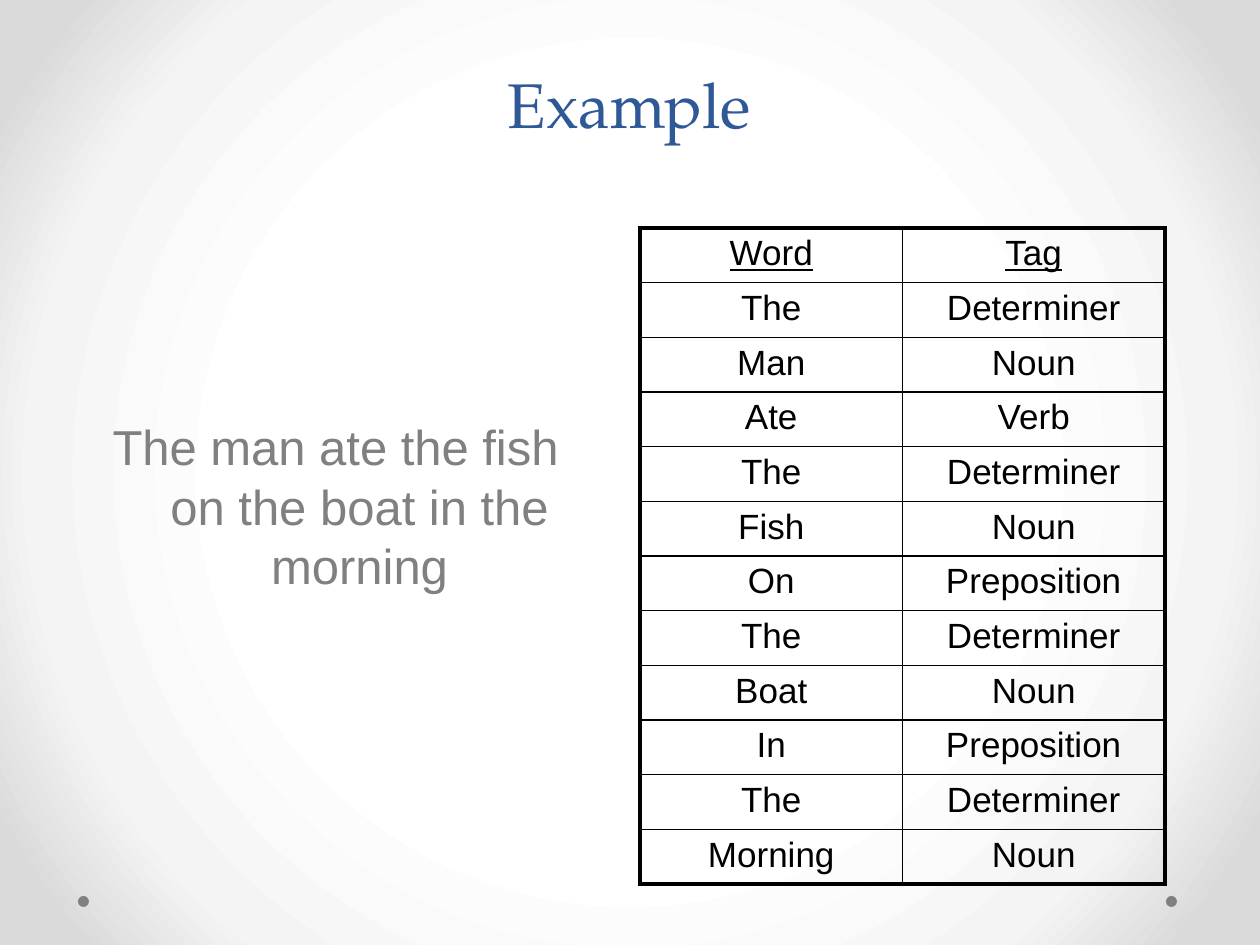
"""Build a slide that tags each word of a sentence with its part of speech."""
import pptx
import pptx.dml.color
import pptx.enum.shapes
import pptx.enum.text
import pptx.oxml
import pptx.oxml.ns
import pptx.util

WORD_TAGS = [
    ("Word", "Tag"),
    ("The", "Determiner"),
    ("Man", "Noun"),
    ("Ate", "Verb"),
    ("The", "Determiner"),
    ("Fish", "Noun"),
    ("On", "Preposition"),
    ("The", "Determiner"),
    ("Boat", "Noun"),
    ("In", "Preposition"),
    ("The", "Determiner"),
    ("Morning", "Noun"),
]


def px(length):
    return pptx.util.Emu(round(length * 914400 / 126))


def color(hex_code):
    return pptx.dml.color.RGBColor.from_string(hex_code)


class SlideBuilder:
    sans = "Arial"
    serif = "TeX Gyre Pagella"
    blue = "2F5897"
    gray = "808080"
    black = "000000"
    outer_line = 2.25
    inner_line = 1

    def __init__(self, slide):
        self.slide = slide

    def background(self, stops):
        fill = self.slide.background.fill
        fill.solid()
        solid = self.slide.element.find(".//" + pptx.oxml.ns.qn("p:bgPr"))[0]
        stop_xml = "".join(
            f'<a:gs pos="{percent * 1000}"><a:srgbClr val="{hex_code}"/></a:gs>'
            for percent, hex_code in stops
        )
        gradient = pptx.oxml.parse_xml(
            f'<a:gradFill {pptx.oxml.ns.nsdecls("a")} rotWithShape="1">'
            f"<a:gsLst>{stop_xml}</a:gsLst>"
            '<a:path path="circle"><a:fillToRect l="50000" t="50000" r="50000" b="50000"/></a:path>'
            "</a:gradFill>"
        )
        solid.getparent().replace(solid, gradient)

    def dot(self, left, top, size):
        shape = self.slide.shapes.add_shape(
            pptx.enum.shapes.MSO_SHAPE.OVAL, px(left), px(top), px(size), px(size)
        )
        shape.shadow.inherit = False
        shape.fill.solid()
        shape.fill.fore_color.rgb = color(self.gray)
        shape.line.fill.background()

    def add_span(self, para, text, font, size, hex_code, underline=False):
        para.alignment = pptx.enum.text.PP_ALIGN.CENTER
        span = para.add_run()
        span.text = text
        span.font.name = font
        span.font.size = pptx.util.Pt(size)
        span.font.color.rgb = color(hex_code)
        span.font.underline = underline

    def text(self, left, top, width, height, text, font, size, hex_code, spacing, anchor, hanging=0):
        box = self.slide.shapes.add_textbox(px(left), px(top), px(width), px(height))
        frame = box.text_frame
        frame.word_wrap = True
        frame.vertical_anchor = anchor
        para = frame.paragraphs[0]
        para.line_spacing = pptx.util.Pt(spacing)
        if hanging:
            properties = para._p.get_or_add_pPr()
            properties.set("marL", str(px(hanging)))
            properties.set("indent", str(px(-hanging)))
        self.add_span(para, text, font, size, hex_code)

    def borders(self, cell, widths):
        properties = cell._tc.get_or_add_tcPr()
        for position, (side, width) in enumerate(widths.items()):
            line = pptx.oxml.parse_xml(
                f'<a:{side} {pptx.oxml.ns.nsdecls("a")} w="{pptx.util.Pt(width)}">'
                f'<a:solidFill><a:srgbClr val="{self.black}"/></a:solidFill></a:{side}>'
            )
            properties.insert(position, line)

    def table(self, left, top, width, height, rows):
        last_row, last_column = len(rows) - 1, len(rows[0]) - 1
        table = self.slide.shapes.add_table(
            len(rows), len(rows[0]), px(left), px(top), px(width), px(height)
        ).table
        table.first_row = False
        table.horz_banding = False
        for row, values in enumerate(rows):
            for column, value in enumerate(values):
                cell = table.cell(row, column)
                cell.fill.background()
                self.add_span(cell.text_frame.paragraphs[0], value, self.sans, 20, self.black, row == 0)
                edges = {
                    "lnL": column == 0,
                    "lnR": column == last_column,
                    "lnT": row == 0,
                    "lnB": row == last_row,
                }
                self.borders(cell, {
                    side: self.outer_line if outer else self.inner_line
                    for side, outer in edges.items()
                })


def main():
    deck = pptx.Presentation()
    deck.slide_width, deck.slide_height = px(1260), px(945)
    page = SlideBuilder(deck.slides.add_slide(deck.slide_layouts[6]))
    anchors = pptx.enum.text.MSO_ANCHOR
    page.background([(50, "FFFFFF"), (76, "F4F4F4"), (92, "DADADA")])
    for left in (1166, 78):
        page.dot(left, 896, 11)
    page.text(94, 53, 1071, 94, "Example", page.serif, 36, page.blue, 58, anchors.BOTTOM)
    page.text(73, 410, 525, 199, "The man ate the fish on the boat in the morning",
              page.sans, 28, page.gray, 34, anchors.TOP, hanging=48)
    page.table(640, 228, 525, 655, WORD_TAGS)
    deck.save("out.pptx")


if __name__ == "__main__":
    main()
